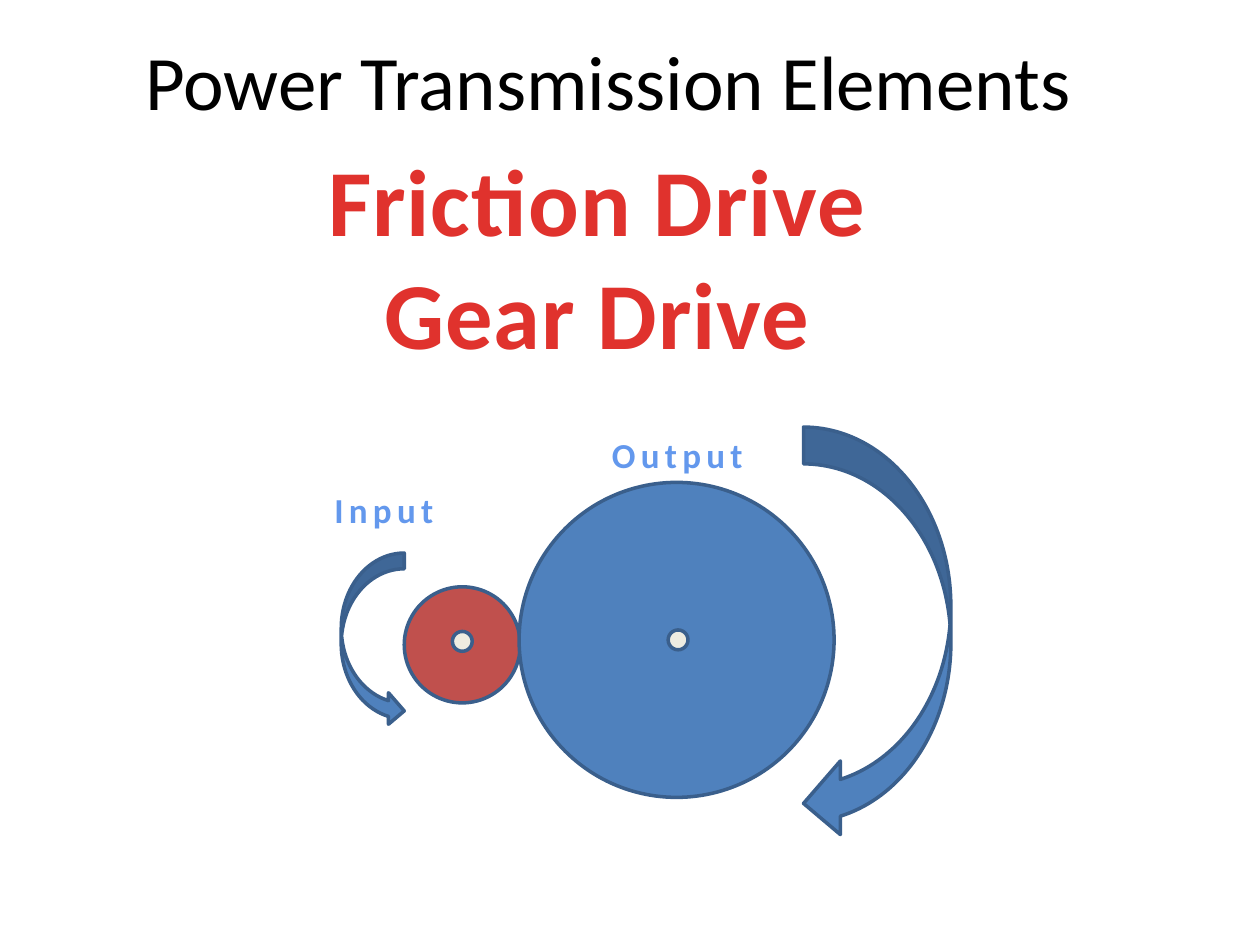
import pptx
import pptx.dml.color
import pptx.enum.shapes
import pptx.enum.text
import pptx.oxml
import pptx.oxml.ns
import pptx.util

Cm = pptx.util.Cm
Pt = pptx.util.Pt
RGB = pptx.dml.color.RGBColor.from_string
PRESET = pptx.enum.shapes.MSO_SHAPE
TEXT = pptx.enum.text

THEME = {
    "font": "Calibri",
    "title": {"size": 44, "color": "000000"},
    "drives": {"size": 54, "bold": True, "spacing": 50,
               "gradient": [(0.25, "E0322D"), (1, "A2201C")]},
    "label": {"size": 20, "bold": True, "spacing": 300, "outline": "F4F6F9",
              "gradient": [(0.1, "6398ED"), (0.75, "265EA0")]},
    "input": "C0504D",
    "output": "4F81BD",
    "axle": "EEECE1",
    "edge": "3A5F8C",
}

deck = pptx.Presentation()
deck.slide_width, deck.slide_height = Cm(25.4), Cm(19.05)
slide = deck.slides.add_slide(deck.slide_layouts[6])


def add_text(lines, style, box, wrap=True, anchor=TEXT.MSO_ANCHOR.TOP):
    frame = slide.shapes.add_textbox(*map(Cm, box)).text_frame
    frame_format = {"word_wrap": wrap, "vertical_anchor": anchor}
    for attribute, setting in frame_format.items():
        setattr(frame, attribute, setting)
    frame.text = "\n".join(lines)
    for paragraph in frame.paragraphs:
        paragraph.alignment = TEXT.PP_ALIGN.CENTER
        font = paragraph.runs[0].font
        font_format = {"name": THEME["font"], "size": Pt(style["size"]),
                       "bold": style.get("bold", False)}
        for attribute, setting in font_format.items():
            setattr(font, attribute, setting)
        if "gradient" in style:
            font.fill.gradient()
            font.fill.gradient_angle = 270
            for stop, (position, color) in zip(font.fill.gradient_stops, style["gradient"]):
                stop.position = position
                stop.color.rgb = RGB(color)
        else:
            font.color.rgb = RGB(style["color"])
        properties = paragraph.runs[0]._r.get_or_add_rPr()
        properties.set("spc", str(style.get("spacing", 0)))
        if "outline" in style:
            properties.insert(0, pptx.oxml.parse_xml(
                f'<a:ln {pptx.oxml.ns.nsdecls("a")} w="11430"><a:solidFill>'
                f'<a:srgbClr val="{style["outline"]}"/></a:solidFill></a:ln>'))


def add_part(preset, box, color):
    part = slide.shapes.add_shape(preset, *map(Cm, box))
    part.shadow.inherit = False
    part.fill.solid()
    part.fill.fore_color.rgb = RGB(color)
    part.line.color.rgb = RGB(THEME["edge"])
    part.line.width = Pt(2)
    return part


add_text(["Power Transmission Elements"], THEME["title"], (1.47, 0.43, 21.59, 2.34),
         anchor=TEXT.MSO_ANCHOR.MIDDLE)
add_text(["Friction Drive", "Gear Drive"], THEME["drives"], (6.3, 2.74, 11.48, 4.88),
         wrap=False)

wheels = [
    (9.32, 13, 2.34, THEME["input"]),
    (13.64, 12.9, 6.35, THEME["output"]),
    (9.32, 12.93, 0.4, THEME["axle"]),
    (13.67, 12.9, 0.4, THEME["axle"]),
]
for center_x, center_y, diameter, color in wheels:
    add_part(PRESET.OVAL, (center_x - diameter / 2, center_y - diameter / 2,
                           diameter, diameter), color)

add_part(PRESET.CURVED_RIGHT_ARROW, (6.88, 11.15, 1.27, 3.5), THEME["output"])
output_turn = add_part(PRESET.CURVED_RIGHT_ARROW, (16.2, 8.61, 2.97, 8.33), THEME["output"])
output_turn._element.spPr.xfrm.set("flipH", "1")

add_text(["Input"], THEME["label"], (6.15, 9.73, 3.18, 1.12))
add_text(["Output"], THEME["label"], (11.84, 8.61, 3.63, 1.12))

deck.save("out.pptx")
